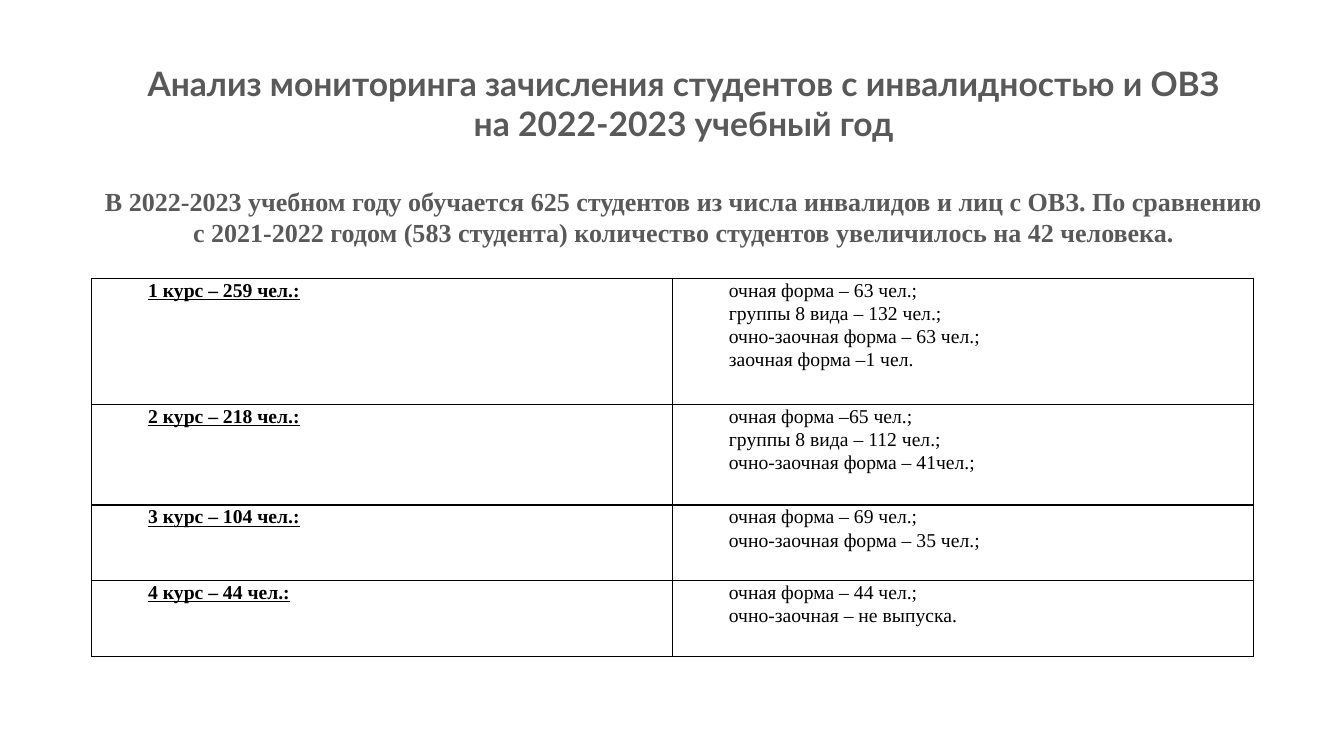
import pptx
import pptx.util
import pptx.dml.color
import pptx.enum.text
import pptx.oxml
import pptx.oxml.ns

Inches = pptx.util.Inches
Pt = pptx.util.Pt
ALIGN = pptx.enum.text.PP_ALIGN
ANCHOR = pptx.enum.text.MSO_ANCHOR
COLORS = {"head": "595959", "ink": "000000", "paper": "FFFFFF"}
SERIF = "Times New Roman"
HEAD = [
    "Анализ мониторинга зачисления студентов с инвалидностью и ОВЗ",
    "на 2022-2023 учебный год",
]
LEAD = (
    "В 2022-2023 учебном году обучается 625 студентов из числа инвалидов и лиц с ОВЗ. "
    "По сравнению с 2021-2022 годом (583 студента) количество студентов увеличилось на 42 человека."
)
ROWS = [
    ("1 курс – 259 чел.:", 1.25, [
        "очная форма – 63 чел.;", "группы 8 вида – 132 чел.;",
        "очно-заочная форма – 63 чел.;", "заочная форма –1 чел."]),
    ("2 курс – 218 чел.:", 1, [
        "очная форма –65 чел.;", "группы 8 вида – 112 чел.;",
        "очно-заочная форма – 41чел.;"]),
    ("3 курс – 104 чел.:", 0.75, [
        "очная форма – 69 чел.;", "очно-заочная форма – 35 чел.;"]),
    ("4 курс – 44 чел.:", 0.75, [
        "очная форма – 44 чел.;", "очно-заочная – не выпуска."]),
]


def apply(item, values):
    """Set each named value on the item."""
    for name, value in values.items():
        setattr(item, name, value)


class Deck:
    """Hold the deck, its style and the current slide."""

    def __init__(self):
        """Open a wide deck with one title-only slide."""
        self.deck = pptx.Presentation()
        apply(self.deck, {"slide_width": Inches(13.33), "slide_height": Inches(7.5)})
        self.slide = self.deck.slides.add_slide(self.deck.slide_layouts[5])

    def line(self, para, text, color, font, layout):
        """Fill one formatted paragraph."""
        run = para.add_run()
        run.text = text
        apply(run.font, font)
        run.font.color.rgb = pptx.dml.color.RGBColor.from_string(COLORS[color])
        apply(para, layout)

    def title(self, box, head, lead):
        """Fill the title with its heading and lead sentence."""
        shape = self.slide.shapes.title
        apply(shape, dict(zip(("left", "top", "width", "height"), map(Inches, box))))
        frame = shape.text_frame
        apply(frame, {"word_wrap": True, "vertical_anchor": ANCHOR.TOP,
                      "auto_size": pptx.enum.text.MSO_AUTO_SIZE.NONE})
        for n, text in enumerate(head + [lead]):
            para = frame.add_paragraph() if n else frame.paragraphs[0]
            last = n == len(head)
            font = {"name": SERIF if last else "Lato",
                    "size": Pt(18.6 if last else 24), "bold": True}
            layout = {"alignment": ALIGN.CENTER, "line_spacing": 1.0,
                      "space_before": Pt(30 if last else 0)}
            self.line(para, text, "head", font, layout)

    def cell(self, cell, lines, strong):
        """Fill one bordered table cell."""
        apply(cell, {"margin_left": Inches(0.07), "margin_right": Inches(0.07),
                     "margin_top": 0, "margin_bottom": 0, "vertical_anchor": ANCHOR.TOP})
        font = {"name": SERIF, "size": Pt(14), "bold": strong, "underline": strong}
        layout = {"alignment": ALIGN.JUSTIFY, "line_spacing": 1.07}
        frame = cell.text_frame
        for n, text in enumerate(lines):
            para = frame.add_paragraph() if n else frame.paragraphs[0]
            self.line(para, text, "ink", font, layout)
            props = para._p.get_or_add_pPr()
            props.set("marL", "0")
            props.set("indent", str(Inches(0.49)))
        props = cell._tc.get_or_add_tcPr()
        for side in "LRTB":
            props.append(pptx.oxml.parse_xml(
                f'<a:ln{side} {pptx.oxml.ns.nsdecls("a")} w="{Pt(1)}"><a:solidFill>'
                f'<a:srgbClr val="{COLORS["ink"]}"/></a:solidFill></a:ln{side}>'))
        cell.fill.solid()
        cell.fill.fore_color.rgb = pptx.dml.color.RGBColor.from_string(COLORS["paper"])

    def table(self, left, top, width, rows):
        """Add the table of years and study forms."""
        tall = sum(row[1] for row in rows)
        grid = self.slide.shapes.add_table(
            len(rows), 2, Inches(left), Inches(top), Inches(width), Inches(tall)).table
        apply(grid, {"first_row": False, "horz_banding": False})
        for n, (year, high, forms) in enumerate(rows):
            grid.rows[n].height = Inches(high)
            self.cell(grid.cell(n, 0), [year], True)
            self.cell(grid.cell(n, 1), forms, False)


def main():
    """Build and save the slide."""
    deck = Deck()
    deck.title((0.91, 0.57, 11.74, 1.94), HEAD, LEAD)
    deck.table(0.91, 2.76, 11.52, ROWS)
    deck.deck.save("out.pptx")


if __name__ == "__main__":
    main()
